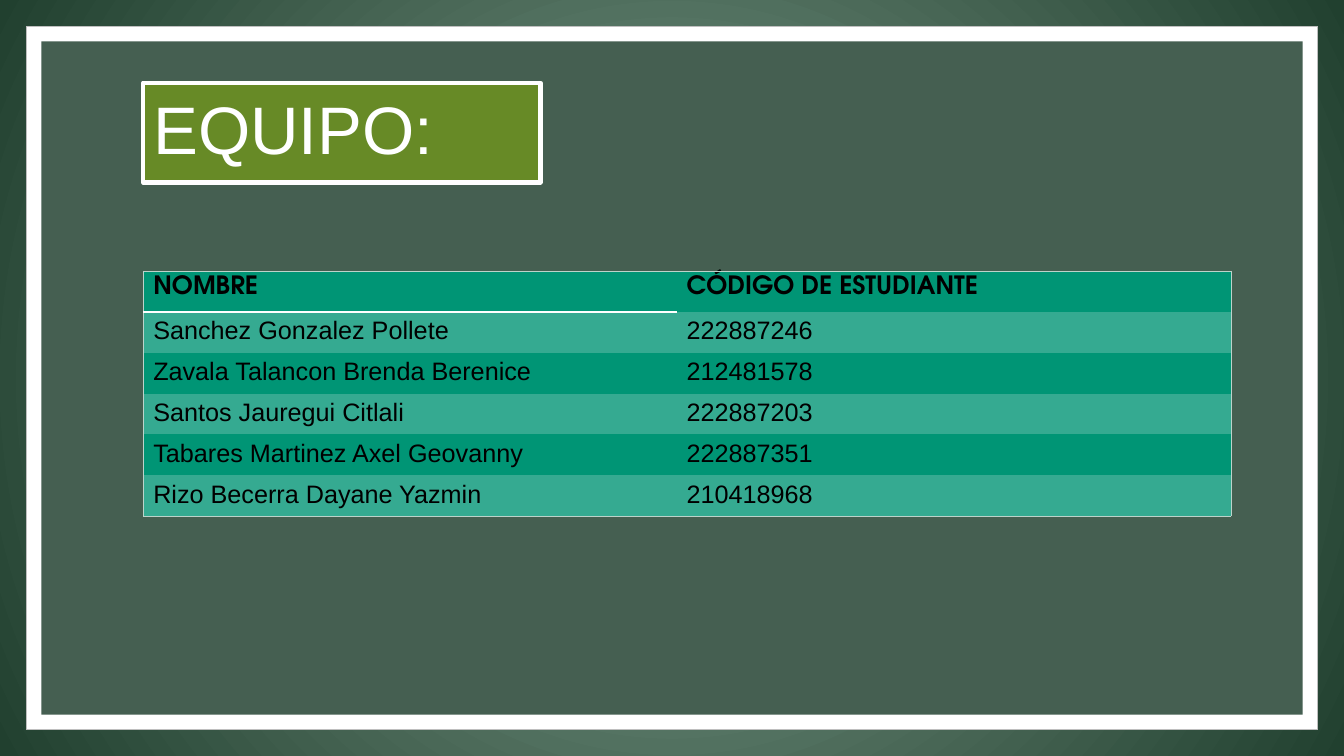
import pptx
import pptx.dml.color
import pptx.enum.shapes
import pptx.enum.text
import pptx.oxml
import pptx.oxml.ns
import pptx.util
from pptx.util import Inches

COLORS = {
    "glow": "7F9D8C", "edge": "21402F", "white": "FFFFFF", "grey": "BFBFBF",
    "panel": "455F51", "olive": "678A26", "black": "000000",
    "row": "009575", "band": "35AA91", "border": "BDD3CA",
}
NO_STYLE = "{2D5ABB26-0587-4C30-8999-92F81FD0307C}"
HEADER_FONT = {"name": "TeX Gyre Adventor", "size": pptx.util.Pt(18), "bold": True}
BODY_FONT = {"name": "Arial", "size": pptx.util.Pt(18), "bold": False}
TITLE_FONT = {"name": "Arial", "size": pptx.util.Pt(48), "bold": False}
TEAM = [
    ("NOMBRE", "CÓDIGO DE ESTUDIANTE"),
    ("Sanchez Gonzalez Pollete", "222887246"),
    ("Zavala Talancon Brenda Berenice", "212481578"),
    ("Santos Jauregui Citlali", "222887203"),
    ("Tabares Martinez Axel Geovanny", "222887351"),
    ("Rizo Becerra Dayane Yazmin", "210418968"),
]


def rgb(name):
    return pptx.dml.color.RGBColor.from_string(COLORS[name])


def format_font(font, values, color):
    for attribute, value in values.items():
        setattr(font, attribute, value)
    font.color.rgb = rgb(color)


def paint(shape, fill, line=None, width=0):
    shape.fill.solid()
    shape.fill.fore_color.rgb = rgb(fill)
    if line:
        shape.line.color.rgb = rgb(line)
        shape.line.width = pptx.util.Pt(width)
    else:
        shape.line.fill.background()


def set_background(slide):
    """Fill the background with a circular gradient, lightest in the centre."""
    fill = slide.background.fill
    fill.gradient()
    for stop, color in zip(fill.gradient_stops, ("glow", "edge")):
        stop.color.rgb = rgb(color)
    gradient = slide.background._cSld.find(".//" + pptx.oxml.ns.qn("a:gradFill"))
    gradient.replace(gradient.find(pptx.oxml.ns.qn("a:lin")), pptx.oxml.parse_xml(
        f'<a:path {pptx.oxml.ns.nsdecls("a")} path="circle">'
        '<a:fillToRect l="50000" t="50000" r="50000" b="50000"/></a:path>'))


def add_panel(slide, inset, fill, line=None, width=0):
    """Add a rectangle at the same distance from every slide edge."""
    panel = slide.shapes.add_shape(
        pptx.enum.shapes.MSO_SHAPE.RECTANGLE, Inches(inset), Inches(inset),
        Inches(13.33 - 2 * inset), Inches(7.5 - 2 * inset))
    panel.shadow.inherit = False
    paint(panel, fill, line, width)


def place_title(slide, text):
    title = slide.shapes.title
    title.left, title.top = Inches(1.42), Inches(0.82)
    title.width, title.height = Inches(3.94), Inches(0.99)
    paint(title, "olive", "white", 3)
    frame = title.text_frame
    frame.text = text
    frame.word_wrap = True
    frame.auto_size = pptx.enum.text.MSO_AUTO_SIZE.NONE
    frame.vertical_anchor = pptx.enum.text.MSO_ANCHOR.MIDDLE
    heading = frame.paragraphs[0]
    heading.alignment = pptx.enum.text.PP_ALIGN.LEFT
    heading.line_spacing = 0.9
    format_font(heading.runs[0].font, TITLE_FONT, "white")
    slide.shapes._spTree.append(title._element)  # bring in front of the panels


def set_borders(cell, borders):
    """Draw cell sides given in the order L, R, T, B as {side: (colour, points)}."""
    properties = cell._tc.get_or_add_tcPr()
    for position, (side, (color, points)) in enumerate(borders.items()):
        properties.insert(position, pptx.oxml.parse_xml(
            f'<a:ln{side} {pptx.oxml.ns.nsdecls("a")} w="{pptx.util.Pt(points)}">'
            f'<a:solidFill><a:srgbClr val="{COLORS[color]}"/></a:solidFill></a:ln{side}>'))


def add_team_table(slide):
    table = slide.shapes.add_table(
        len(TEAM), 2, Inches(1.42), Inches(2.69), Inches(10.79), Inches(2.43)).table
    table._tbl.tblPr.find(pptx.oxml.ns.qn("a:tableStyleId")).text = NO_STYLE
    table.horz_banding = False
    for column, width in zip(table.columns, (5.29, 5.5)):
        column.width = Inches(width)
    last = len(TEAM) - 1
    for r, member in enumerate(TEAM):
        for c, text in enumerate(member):
            cell = table.cell(r, c)
            cell.text = text
            format_font(cell.text_frame.paragraphs[0].runs[0].font,
                        BODY_FONT if r else HEADER_FONT, "black")
            cell.fill.solid()
            cell.fill.fore_color.rgb = rgb("band" if r % 2 else "row")
            borders = {"R" if c else "L": ("border", 0.5)}
            if r == 0:
                borders["T"] = ("border", 0.5)
                if c == 0:
                    borders["B"] = ("white", 1.5)
            elif r == last:
                borders["B"] = ("border", 0.5)
            set_borders(cell, borders)


def main():
    deck = pptx.Presentation()
    deck.slide_width, deck.slide_height = Inches(13.33), Inches(7.5)
    slide = deck.slides.add_slide(deck.slide_layouts[5])
    set_background(slide)
    add_panel(slide, 0.26, "white", "grey", 0.5)
    add_panel(slide, 0.41, "panel")
    place_title(slide, "EQUIPO:")
    add_team_table(slide)
    deck.save("out.pptx")


if __name__ == "__main__":
    main()
